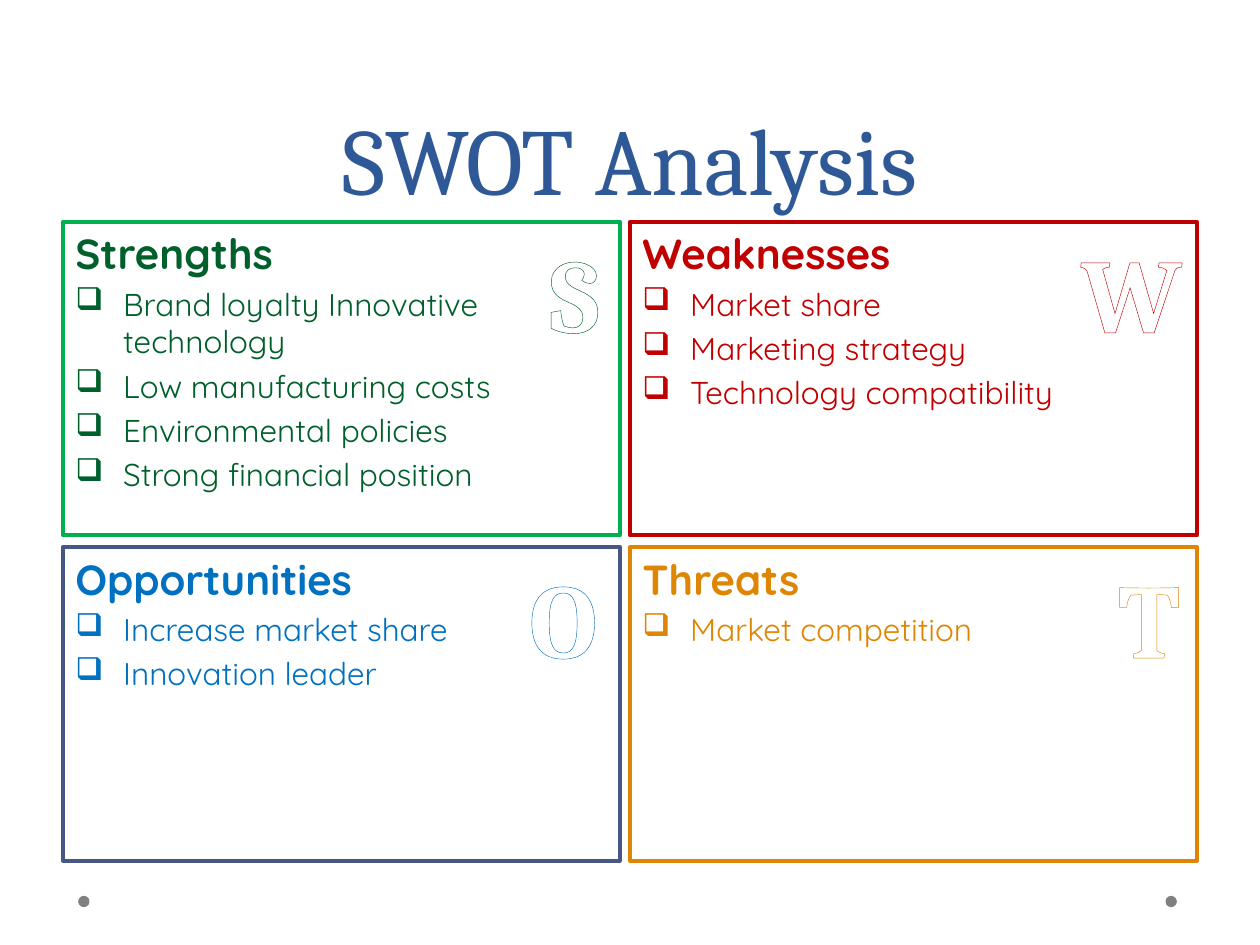
from lxml import etree
from pptx import Presentation
from pptx.dml.color import RGBColor
from pptx.enum.shapes import MSO_SHAPE
from pptx.enum.text import MSO_ANCHOR, PP_ALIGN
from pptx.oxml.ns import qn
from pptx.util import Inches, Pt

RECTANGLE = MSO_SHAPE.RECTANGLE
OVAL = MSO_SHAPE.OVAL
BOTTOM = MSO_ANCHOR.BOTTOM
CENTER = PP_ALIGN.CENTER

WHITE = RGBColor(0xFF, 0xFF, 0xFF)
GRAY = RGBColor(0x80, 0x80, 0x80)
TITLE_BLUE = RGBColor(0x2F, 0x58, 0x97)
DARK_GREEN = RGBColor(0x00, 0x60, 0x2B)
GREEN = RGBColor(0x00, 0xB0, 0x50)
RED = RGBColor(0xC0, 0x00, 0x00)
BLUE = RGBColor(0x00, 0x70, 0xC0)
SLATE = RGBColor(0x47, 0x57, 0x85)
ORANGE = RGBColor(0xDE, 0x86, 0x04)

COLUMN_LEFTS = (0.5, 5)
COLUMN_WIDTHS = (4.42, 4.5)
ROW_TOPS = (1.76, 4.34)
ROW_HEIGHT = 2.49
TEXT_WIDTH = 4.5
LETTER_HEIGHT = 1.11
DOT_SIZE = 0.09
INDENT = Inches(0.38)

QUADRANTS = [
    ("Strengths", DARK_GREEN, GREEN, 0.72,
     ["Brand loyalty Innovative technology", "Low manufacturing costs",
      "Environmental policies", "Strong financial position"]),
    ("Weaknesses", RED, RED, 1.04,
     ["Market share", "Marketing strategy", "Technology compatibility"]),
    ("Opportunities", BLUE, SLATE, 0.9,
     ["Increase market share", "Innovation leader"]),
    ("Threats", ORANGE, ORANGE, 0.76, ["Market competition"]),
]


def add_text_frame(left, top, width, height, wrap=True):
    box = slide.shapes.add_textbox(Inches(left), Inches(top), Inches(width), Inches(height))
    box.text_frame.word_wrap = wrap
    return box.text_frame


def add_run(paragraph, text, font_name, size, color, bold=False):
    run = paragraph.add_run()
    run.text = text
    run.font.name = font_name
    run.font.size = Pt(size)
    run.font.bold = bold
    run.font.color.rgb = color
    return run


presentation = Presentation()
presentation.slide_width = Inches(10)
presentation.slide_height = Inches(7.5)
slide = presentation.slides.add_slide(presentation.slide_layouts[6])

for left in (9.25, 0.62):
    dot = slide.shapes.add_shape(
        OVAL, Inches(left), Inches(7.11), Inches(DOT_SIZE), Inches(DOT_SIZE))
    dot.shadow.inherit = False
    dot.fill.solid()
    dot.fill.fore_color.rgb = GRAY
    dot.line.fill.background()

title_frame = add_text_frame(0.5, 0, 9, 1.75)
title_frame.vertical_anchor = BOTTOM
title = title_frame.paragraphs[0]
title.alignment = CENTER
title.line_spacing = Pt(58)
add_run(title, "SWOT Analysis", "Cambria", 54, TITLE_BLUE)

for index, (heading, color, border_color, letter_width, items) in enumerate(QUADRANTS):
    row, column = divmod(index, 2)
    left, top, width = COLUMN_LEFTS[column], ROW_TOPS[row], COLUMN_WIDTHS[column]

    text_frame = add_text_frame(left, top, TEXT_WIDTH, ROW_HEIGHT)
    add_run(text_frame.paragraphs[0], heading, "Quicksand", 24, color, bold=True)
    for item in items:
        paragraph = text_frame.add_paragraph()
        paragraph.space_before = Pt(3.6)
        properties = paragraph._p.get_or_add_pPr()
        properties.set("marL", str(INDENT))
        properties.set("indent", str(-INDENT))
        etree.SubElement(properties, qn("a:buChar"), char="❑")
        add_run(paragraph, item, "Quicksand", 18, color)

    border = slide.shapes.add_shape(
        RECTANGLE, Inches(left), Inches(top), Inches(width), Inches(ROW_HEIGHT))
    border.shadow.inherit = False
    border.fill.background()
    border.line.color.rgb = border_color
    border.line.width = Pt(2.25)

    letter_frame = add_text_frame(
        left + width - letter_width, top, letter_width, LETTER_HEIGHT, wrap=False)
    letter = letter_frame.paragraphs[0]
    letter.alignment = CENTER
    run = add_run(letter, heading[0], "Cambria", 60, WHITE, bold=True)
    outline = etree.Element(qn("a:ln"), w=str(Pt(2.48)))
    outline_fill = etree.SubElement(outline, qn("a:solidFill"))
    etree.SubElement(outline_fill, qn("a:srgbClr"), val=str(color))
    run._r.get_or_add_rPr().insert(0, outline)

presentation.save("out.pptx")
